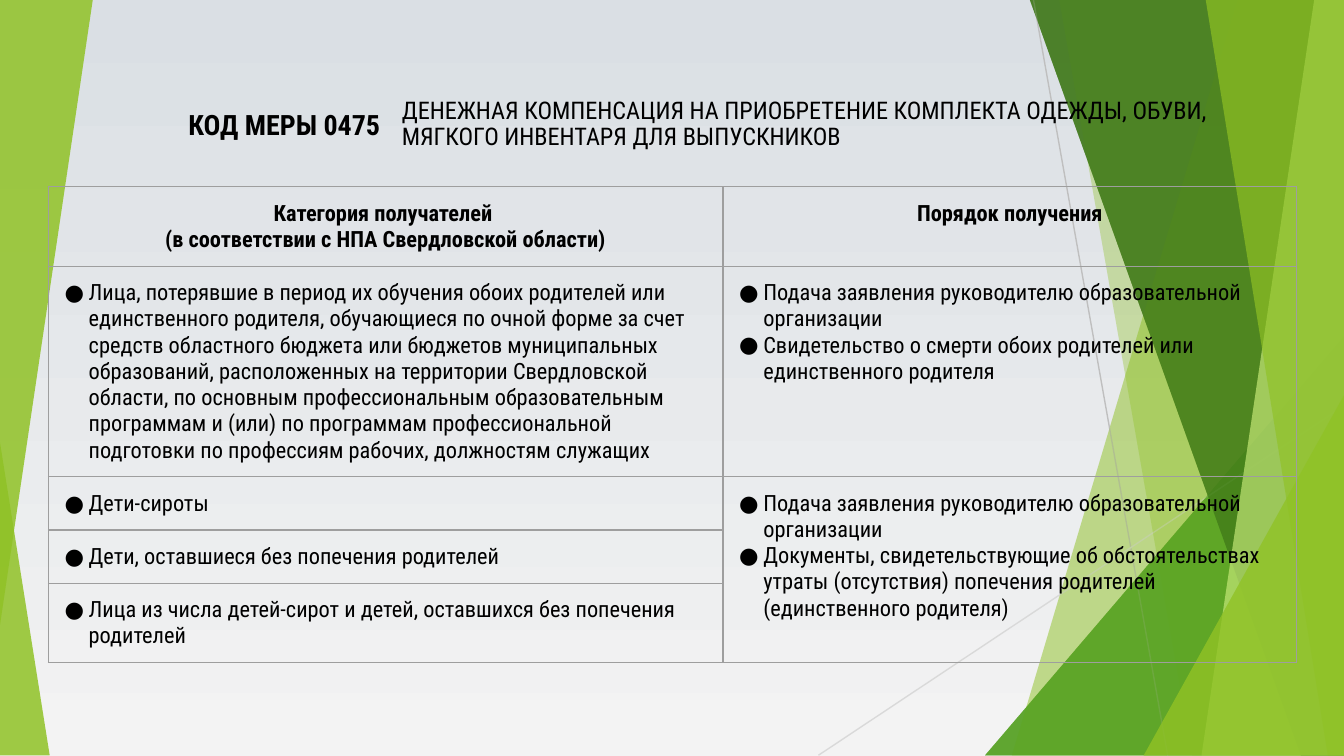
from typing import NamedTuple

from lxml import etree
from pptx import Presentation
from pptx import util as u
from pptx.dml.color import RGBColor
from pptx.enum import shapes, text
from pptx.oxml.ns import qn

FONT = "Roboto Condensed"
COLORS = {
    "text": "000000", "border": "9E9E9E", "sky": "DADFE4", "ground": "F3F3F3",
    "lime": "90C226", "green": "54A021", "dark": "3F7819", "pale": "C0E474",
    "steep": "BFBFBF", "shallow": "D9D9D9",
}
TOP, BOTTOM, RIGHT = -0.01, 5.62, 10


class Band(NamedTuple):
    """Facet running from top to bottom along the right slide edge."""
    top_x: float
    bottom_x: float
    color: str
    alpha: int


class Wedge(NamedTuple):
    """Right-angled triangle; apex 0 is at the left, 1 at the right."""
    left: float
    top: float
    width: float
    height: float
    apex: int
    color: str
    alpha: int
    rotation: int = 0


class Ray(NamedTuple):
    x1: float
    y1: float
    x2: float
    y2: float
    color: str


class Cell(NamedTuple):
    row: int
    column: int
    lines: list[str]
    header: bool = False


FACETS = [
    Band(9.21, 7.53, "lime", 30),
    Band(7.88, 8.87, "lime", 20),
    Wedge(7.33, 2.5, 2.67, 3.12, 1, "green", 72),
    Band(7.66, 9.68, "dark", 70),
    Band(9.78, 8.94, "pale", 70),
    Band(8.97, 9.88, "lime", 65),
    Wedge(8.51, 2.94, 1.49, 2.68, 1, "lime", 80),
]
LOWER_LEFT = Wedge(0, 3.29, 0.37, 2.33, 0, "lime", 85)
UPPER_LEFT = Wedge(0, 0, 0.69, 4.65, 1, "lime", 85, 180)
RAYS = [Ray(7.69, 0, 8.69, 5.63, "steep"), Ray(10, 3.02, 6.09, 5.62, "shallow")]

APPLICATION = "Подача заявления руководителю образовательной организации"
COLUMN_WIDTHS = [5.02, 4.27]
ROW_HEIGHTS = [0.59, 1.56, 0.39, 0.39, 0.59]
CELLS = [
    Cell(0, 0, ["Категория получателей ",
                "(в соответствии с НПА Свердловской области)"], True),
    Cell(0, 1, ["Порядок получения"], True),
    Cell(1, 0, ["Лица, потерявшие в период их обучения обоих родителей или "
                "единственного родителя, обучающиеся по очной форме за счет "
                "средств областного бюджета или бюджетов муниципальных "
                "образований, расположенных на территории Свердловской области, "
                "по основным профессиональным образовательным программам и (или) "
                "по программам профессиональной подготовки по профессиям рабочих, "
                "должностям служащих"]),
    Cell(1, 1, [APPLICATION,
                "Свидетельство о смерти обоих родителей или единственного родителя"]),
    Cell(2, 0, ["Дети-сироты"]),
    Cell(2, 1, [APPLICATION,
                "Документы, свидетельствующие об обстоятельствах утраты "
                "(отсутствия) попечения родителей (единственного родителя)"]),
    Cell(3, 0, ["Дети, оставшиеся без попечения родителей"]),
    Cell(4, 0, ["Лица из числа детей-сирот и детей, оставшихся без попечения "
                "родителей"]),
]


def rgb(name: str) -> RGBColor:
    return RGBColor.from_string(COLORS[name])


def draw_facet(slide, facet: Band | Wedge) -> None:
    if isinstance(facet, Band):
        corners = [(u.Inches(x), u.Inches(y)) for x, y in (
            (facet.top_x, TOP), (RIGHT, TOP), (RIGHT, BOTTOM), (facet.bottom_x, BOTTOM))]
        outline = slide.shapes.build_freeform(*corners[0])
        outline.add_line_segments(corners[1:])
        shape = outline.convert_to_shape()
    else:
        shape = slide.shapes.add_shape(
            shapes.MSO_SHAPE.ISOSCELES_TRIANGLE, u.Inches(facet.left),
            u.Inches(facet.top), u.Inches(facet.width), u.Inches(facet.height))
        shape.adjustments[0] = facet.apex
        shape.rotation = facet.rotation
    shape.shadow.inherit = False
    shape.line.fill.background()
    shape.fill.solid()
    shape.fill.fore_color.rgb = rgb(facet.color)
    color = shape._element.spPr.find(f".//{qn('a:srgbClr')}")
    etree.SubElement(color, qn("a:alpha"), val=str(facet.alpha * 1000))


def draw_ray(slide, ray: Ray) -> None:
    line = slide.shapes.add_connector(
        shapes.MSO_CONNECTOR.STRAIGHT, u.Inches(ray.x1), u.Inches(ray.y1),
        u.Inches(ray.x2), u.Inches(ray.y2))
    line.line.color.rgb = rgb(ray.color)
    line.line.width = u.Pt(0.75)
    etree.SubElement(line._element.spPr, qn("a:effectLst"))


def style(paragraph, size: float, bold: bool, align: text.PP_ALIGN) -> None:
    paragraph.font.name = FONT
    paragraph.font.size = u.Pt(size)
    paragraph.font.bold = bold
    paragraph.font.color.rgb = rgb("text")
    paragraph.alignment = align


def set_margins(target, x: float, y: float) -> None:
    target.margin_left = target.margin_right = u.Inches(x)
    target.margin_top = target.margin_bottom = u.Inches(y)


def fill_heading(shape, words: str, size: float, bold: bool,
                 align: text.PP_ALIGN, margins: tuple[float, float],
                 spacing: float) -> None:
    frame = shape.text_frame
    frame.text = words
    frame.word_wrap = True
    frame.auto_size = text.MSO_AUTO_SIZE.NONE
    frame.vertical_anchor = text.MSO_ANCHOR.MIDDLE
    set_margins(frame, *margins)
    style(frame.paragraphs[0], size, bold, align)
    frame.paragraphs[0].line_spacing = spacing


def add_bullet(paragraph) -> None:
    properties = paragraph._p.get_or_add_pPr()
    properties.set("marL", str(u.Inches(0.2)))
    properties.set("indent", str(u.Inches(-0.18)))
    bullet_color = etree.Element(qn("a:buClr"))
    etree.SubElement(bullet_color, qn("a:srgbClr"), val=COLORS["text"])
    bullet_font = etree.Element(qn("a:buFont"), typeface=FONT)
    bullet = etree.Element(qn("a:buChar"), char="●")
    for position, part in enumerate((bullet_color, bullet_font, bullet)):
        properties.insert(position, part)


def add_borders(cell) -> None:
    properties = cell._tc.get_or_add_tcPr()
    for position, side in enumerate(("lnL", "lnR", "lnT", "lnB")):
        line = etree.Element(qn(f"a:{side}"), w=str(u.Pt(0.75)))
        fill = etree.SubElement(line, qn("a:solidFill"))
        etree.SubElement(fill, qn("a:srgbClr"), val=COLORS["border"])
        properties.insert(position, line)


def draw_table(slide) -> None:
    table = slide.shapes.add_table(
        len(ROW_HEIGHTS), len(COLUMN_WIDTHS), u.Inches(0.36), u.Inches(1.39),
        u.Inches(sum(COLUMN_WIDTHS)), u.Inches(sum(ROW_HEIGHTS))).table
    table.first_row = table.horz_banding = False
    for column, width in zip(table.columns, COLUMN_WIDTHS):
        column.width = u.Inches(width)
    for row, height in zip(table.rows, ROW_HEIGHTS):
        row.height = u.Inches(height)
    for cell in table.iter_cells():
        cell.fill.background()
        set_margins(cell, 0.1, 0.1)
        add_borders(cell)
    table.cell(2, 1).merge(table.cell(4, 1))
    for entry in CELLS:
        frame = table.cell(entry.row, entry.column).text_frame
        frame.text = "\n".join(entry.lines)
        align = text.PP_ALIGN.CENTER if entry.header else text.PP_ALIGN.LEFT
        for paragraph in frame.paragraphs:
            style(paragraph, 12, entry.header, align)
            if not entry.header:
                add_bullet(paragraph)


def main() -> None:
    deck = Presentation()
    deck.slide_width, deck.slide_height = u.Inches(10), u.Inches(10 * 9 / 16)
    slide = deck.slides.add_slide(deck.slide_layouts[5])

    # Background gradient, top to bottom
    backdrop = slide.background.fill
    backdrop.gradient()
    backdrop.gradient_angle = 270
    for stop, name in zip(backdrop.gradient_stops, ("sky", "ground")):
        stop.color.rgb = rgb(name)

    # Two layers of facets with thin rays between them
    for facet in [*FACETS, LOWER_LEFT]:
        draw_facet(slide, facet)
    for ray in RAYS:
        draw_ray(slide, ray)
    for facet in [*FACETS, UPPER_LEFT]:
        draw_facet(slide, facet)

    # Measure code as the title, in front of the facets
    code = slide.shapes.title
    slide.shapes._spTree.append(code._element)
    code.left, code.top = u.Inches(0.82), u.Inches(0.54)
    code.width, code.height = u.Inches(2.11), u.Inches(0.77)
    fill_heading(code, "КОД МЕРЫ 0475", 15, True, text.PP_ALIGN.RIGHT, (0.1, 0.1), 1)

    # Recipients and procedure
    draw_table(slide)

    # Measure name
    measure = slide.shapes.add_textbox(
        u.Inches(2.92), u.Inches(0.54), u.Inches(6.3), u.Inches(0.77))
    fill_heading(measure, "ДЕНЕЖНАЯ КОМПЕНСАЦИЯ НА ПРИОБРЕТЕНИЕ КОМПЛЕКТА ОДЕЖДЫ, "
                 "ОБУВИ, МЯГКОГО ИНВЕНТАРЯ ДЛЯ ВЫПУСКНИКОВ", 13, False,
                 text.PP_ALIGN.LEFT, (0.07, 0.04), 0.9)

    deck.save("out.pptx")


if __name__ == "__main__":
    main()
